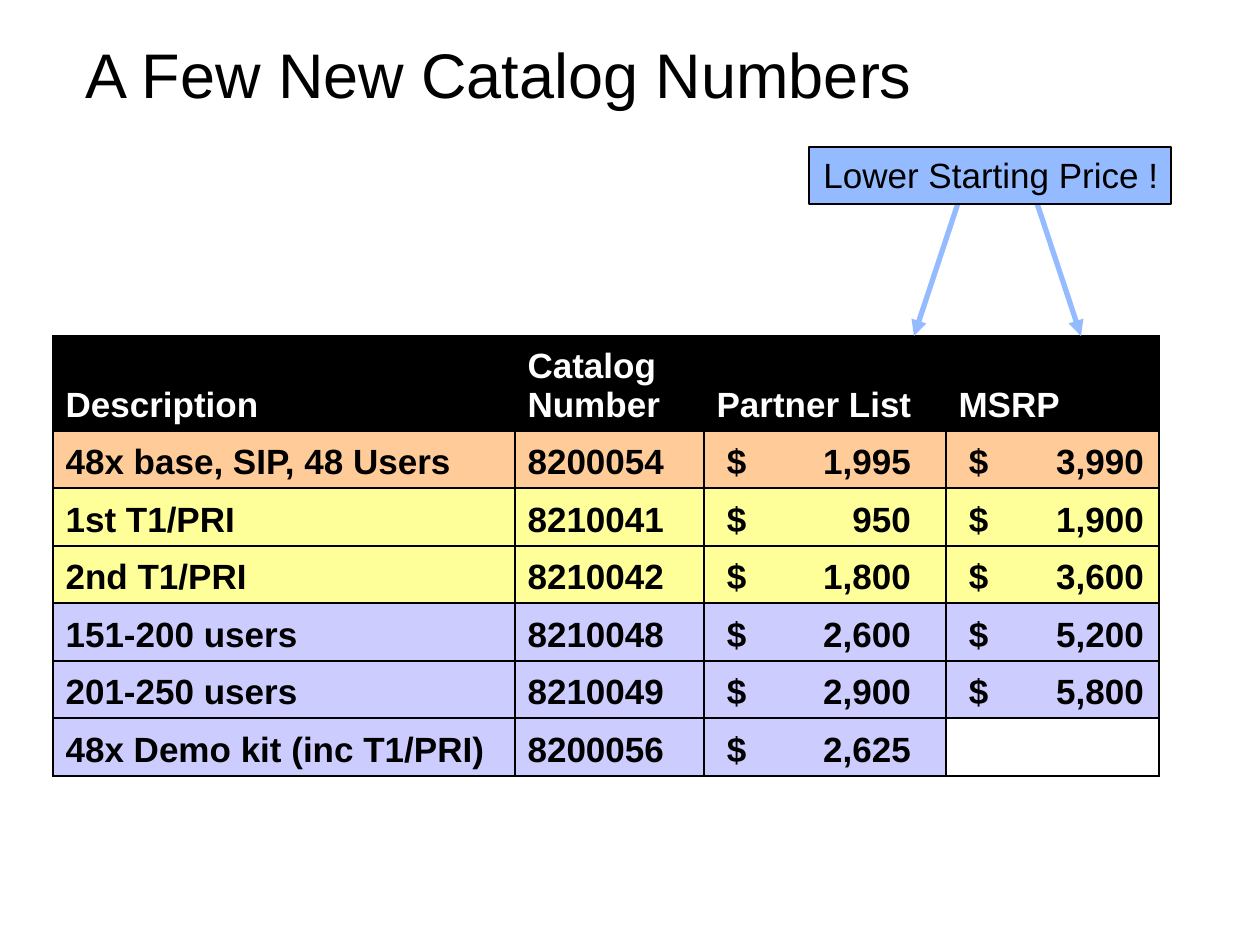
from lxml.etree import SubElement
from pptx import Presentation
from pptx.dml.color import RGBColor
from pptx.enum.shapes import MSO_CONNECTOR as Connector, MSO_SHAPE as Shape
from pptx.enum.text import MSO_ANCHOR as Anchor, PP_ALIGN as Align
from pptx.oxml.ns import qn
from pptx.util import Pt

PX = 914400 / 126
COLORS = {"black": "000000", "white": "FFFFFF", "blue": "94BAFF",
          "orange": "FFCC99", "yellow": "FFFF99", "lilac": "CCCCFF"}


def px(*values):
    return [round(value * PX) for value in values]


def write(para, text, color="black", size=20, bold=False):
    span = para.add_run()
    span.text = text
    for name, value in {"name": "Arial", "size": Pt(size), "bold": bold}.items():
        setattr(span.font, name, value)
    span.font.color.rgb = RGBColor.from_string(COLORS[color])


deck = Presentation()
deck.slide_width, deck.slide_height = px(1260, 945)
page = deck.slides.add_slide(deck.slide_layouts[5])

# Title
title = page.shapes.title
title.left, title.top, title.width, title.height = px(73, 21, 1103, 105)
title.text_frame.vertical_anchor = Anchor.MIDDLE
title.text_frame.paragraphs[0].alignment = Align.LEFT
write(title.text_frame.paragraphs[0], "A Few New Catalog Numbers", size=36)

# Price table: row colour, then cell texts
rows = [
    ("black", "Description", "Catalog\nNumber", "Partner List", "MSRP"),
    ("orange", "48x base, SIP, 48 Users", "8200054", "$\t1,995", "$\t3,990"),
    ("yellow", "1st T1/PRI", "8210041", "$\t950", "$\t1,900"),
    ("yellow", "2nd T1/PRI", "8210042", "$\t1,800", "$\t3,600"),
    ("lilac", "151-200 users", "8210048", "$\t2,600", "$\t5,200"),
    ("lilac", "201-250 users", "8210049", "$\t2,900", "$\t5,800"),
    ("lilac", "48x Demo kit (inc T1/PRI)", "8200056", "$\t2,625", ""),
]
column_widths = px(462, 189, 242, 213)
row_heights = px(95, *[57, 58] * 3)
price_tabs = dict(zip((2, 3), px(184, 175)))
table = page.shapes.add_table(len(rows), 4, *px(53, 336, 1106, 440)).table
table.first_row = table.horz_banding = False
for column, width in zip(table.columns, column_widths):
    column.width = width
for row, height in zip(table.rows, row_heights):
    row.height = height

for r, (row_color, *texts) in enumerate(rows):
    for c, text in enumerate(texts):
        cell = table.cell(r, c)
        cell.vertical_anchor = Anchor.BOTTOM
        properties = cell._tc.get_or_add_tcPr()
        for side in ("lnL", "lnR", "lnT", "lnB"):
            border = SubElement(properties, qn(f"a:{side}"), w=str(Pt(1)))
            solid = SubElement(border, qn("a:solidFill"))
            SubElement(solid, qn("a:srgbClr"), val=COLORS["black"])
        cell.fill.solid()
        cell.fill.fore_color.rgb = RGBColor.from_string(COLORS[row_color if text else "white"])
        if not text:
            continue
        for i, line in enumerate(text.split("\n")):
            para = cell.text_frame.add_paragraph() if i else cell.text_frame.paragraphs[0]
            if "\t" in line:
                cell.margin_left, cell.margin_right = px(23, 0)
                tabs = SubElement(para._p.get_or_add_pPr(), qn("a:tabLst"))
                SubElement(tabs, qn("a:tab"), pos=str(price_tabs[c]), algn="r")
            write(para, line, "black" if r else "white", bold=True)

# Arrows from the callout to the price columns
for start_x, end_x in ((966, 914), (1029, 1081)):
    arrow = page.shapes.add_connector(Connector.STRAIGHT, *px(start_x, 179, end_x, 336))
    arrow.line.width = Pt(3)
    arrow.line.color.rgb = RGBColor.from_string(COLORS["blue"])
    SubElement(arrow.line._get_or_add_ln(), qn("a:tailEnd"), type="triangle")
    SubElement(arrow._element.spPr, qn("a:effectLst"))

# Callout
callout = page.shapes.add_shape(Shape.RECTANGLE, *px(809, 147, 362, 57))
callout.shadow.inherit = False
callout.fill.solid()
callout.fill.fore_color.rgb = RGBColor.from_string(COLORS["blue"])
callout.line.color.rgb = RGBColor.from_string(COLORS["black"])
callout.line.width = Pt(1.5)
callout.text_frame.word_wrap = False
callout.text_frame.vertical_anchor = Anchor.TOP
callout.text_frame.paragraphs[0].alignment = Align.RIGHT
write(callout.text_frame.paragraphs[0], "Lower Starting Price !")

deck.save("out.pptx")
